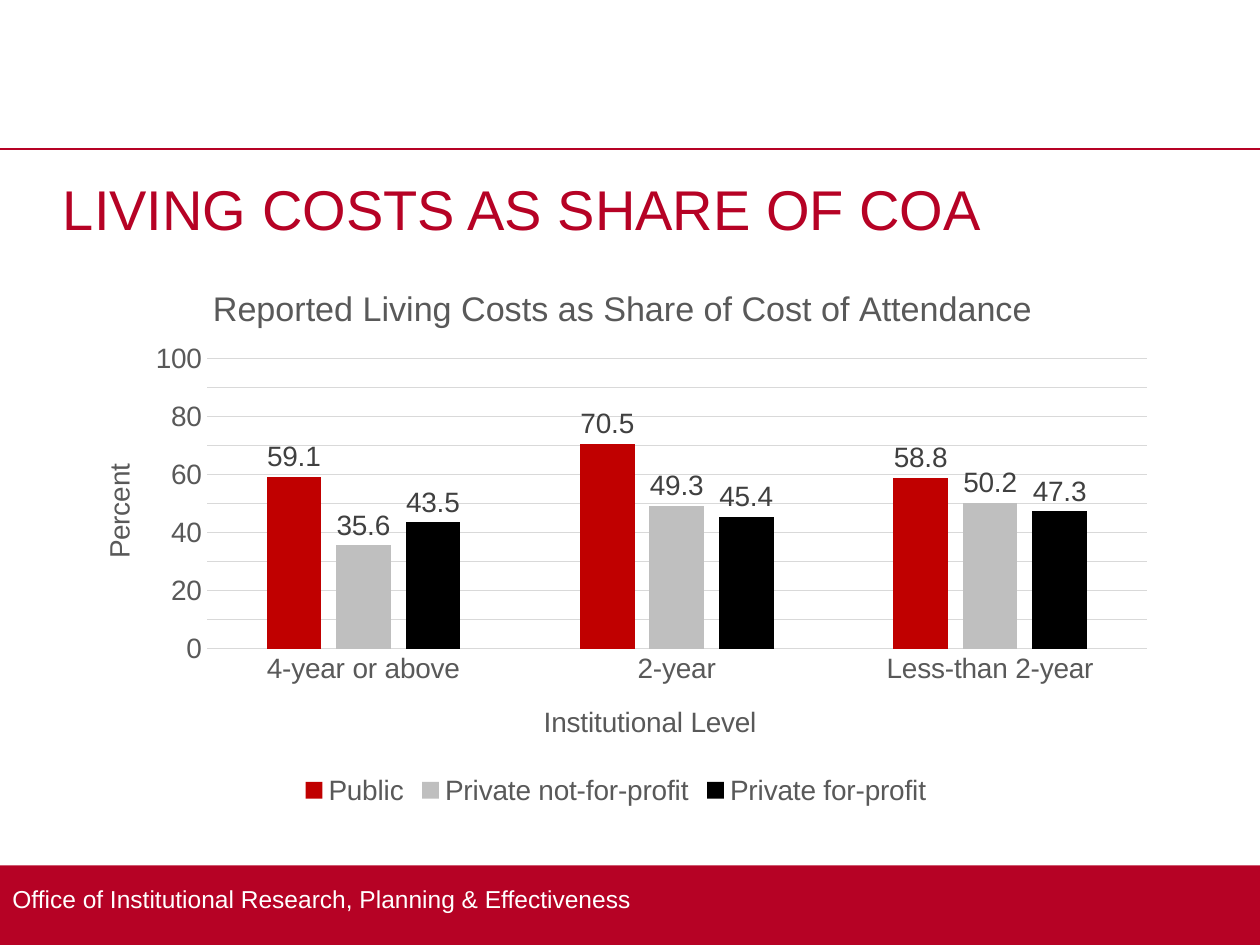
from dataclasses import dataclass

from lxml.etree import SubElement
from pptx import Presentation
from pptx.chart.data import CategoryChartData
from pptx.dml.color import RGBColor
from pptx.enum.chart import XL_CHART_TYPE, XL_LABEL_POSITION, XL_LEGEND_POSITION, XL_TICK_MARK
from pptx.enum.shapes import MSO_CONNECTOR, MSO_SHAPE
from pptx.enum.text import MSO_ANCHOR
from pptx.oxml import parse_xml
from pptx.oxml.ns import nsdecls, qn
from pptx.util import Pt


@dataclass(frozen=True)
class Theme:
    font: str = "Arial"
    brand: str = "B60225"
    white: str = "FFFFFF"
    muted: str = "595959"
    label: str = "404040"
    grid: str = "D9D9D9"
    bars: tuple = ("C00000", "BFBFBF", "000000")
    heading: float = 32
    chart_title: float = 19.5
    chart_text: float = 16
    footer: float = 14


THEME = Theme()
LEVELS = ("4-year or above", "2-year", "Less-than 2-year")
SHARES = {
    "Public": (59.1, 70.5, 58.8),
    "Private not-for-profit": (35.6, 49.3, 50.2),
    "Private for-profit": (43.5, 45.4, 47.3),
}


def apply_format(target, values):
    for name, value in values.items():
        setattr(target, name, value)


def style_font(font, size, color):
    apply_format(font, {"name": THEME.font, "size": Pt(size), "bold": False})
    font.color.rgb = RGBColor.from_string(color)


def style_line(line, color, width):
    line.color.rgb = RGBColor.from_string(color)
    line.width = Pt(width)


def add_text(page, box, text, size, color, frame_format):
    frame = page.shapes.add_textbox(*map(Pt, box)).text_frame
    apply_format(frame, {"word_wrap": True, **frame_format})
    span = frame.paragraphs[0].add_run()
    span.text = text
    style_font(span.font, size, color)


def add_header(page, box):
    left, top, width, height = box
    rule = page.shapes.add_connector(
        MSO_CONNECTOR.STRAIGHT, Pt(left), Pt(top), Pt(left + width), Pt(top))
    style_line(rule.line, THEME.brand, 1)
    SubElement(rule._element.spPr, qn("a:effectLst"))
    add_text(page, (left + 36, top + 8, width - 72, height - 8),
             "LIVING COSTS AS SHARE OF COA", THEME.heading, THEME.brand,
             {"margin_left": 0, "margin_right": 0, "margin_top": Pt(6.5)})


def add_footer(page, box):
    left, top, width, height = box
    band = page.shapes.add_shape(MSO_SHAPE.RECTANGLE, *map(Pt, box))
    band.shadow.inherit = False
    band.fill.solid()
    band.fill.fore_color.rgb = RGBColor.from_string(THEME.brand)
    band.line.fill.background()
    add_text(page, (left, top + 0.7, width, height - 8.7),
             "Office of Institutional Research, Planning & Effectiveness",
             THEME.footer, THEME.white, {"vertical_anchor": MSO_ANCHOR.MIDDLE})


def make_layout(inner=False, **edges):
    target = '<c:layoutTarget val="inner"/>' if inner else ""
    modes = '<c:xMode val="edge"/><c:yMode val="edge"/>'
    sizes = "".join(f'<c:{name} val="{value}"/>' for name, value in edges.items())
    return parse_xml(f'<c:layout {nsdecls("c")}><c:manualLayout>'
                     f'{target}{modes}{sizes}</c:manualLayout></c:layout>')


def set_title(title, text, size, x, y, turned=False):
    frame = title.text_frame
    frame.text = text
    style_font(frame.paragraphs[0].runs[0].font, size, THEME.muted)
    element = title._element
    for layout in element.findall(qn("c:layout")):
        element.remove(layout)
    element.find(qn("c:tx")).addnext(make_layout(x=x, y=y))
    if turned:
        body = next(element.iter(qn("a:bodyPr")))
        body.set("rot", "-5400000")
        body.set("vert", "horz")


def style_axes(chart):
    category, value = chart.category_axis, chart.value_axis
    for axis in (category, value):
        apply_format(axis, {"major_tick_mark": XL_TICK_MARK.NONE,
                            "minor_tick_mark": XL_TICK_MARK.NONE})
        style_font(axis.tick_labels.font, THEME.chart_text, THEME.muted)
    style_line(category.format.line, THEME.grid, 0.75)
    value.format.line.fill.background()
    apply_format(value, {"minimum_scale": 0, "maximum_scale": 100,
                         "major_unit": 10, "has_major_gridlines": True})
    style_line(value.major_gridlines.format.line, THEME.grid, 0.75)
    set_title(category.axis_title, "Institutional Level", THEME.chart_text, 0.43, 0.8)
    set_title(value.axis_title, "Percent", THEME.chart_text, 0.03, 0.37, turned=True)


def style_bars(plot):
    apply_format(plot, {"gap_width": 219, "overlap": -27, "vary_by_categories": False})
    for series, color in zip(plot.series, THEME.bars):
        series.format.fill.solid()
        series.format.fill.fore_color.rgb = RGBColor.from_string(color)
        labels = series.data_labels
        apply_format(labels, {"show_value": True, "position": XL_LABEL_POSITION.OUTSIDE_END,
                              "number_format": "0.0", "number_format_is_linked": False})
        style_font(labels.font, THEME.chart_text, THEME.label)


def add_cost_chart(page, box):
    data = CategoryChartData()
    data.categories = LEVELS
    for name, values in SHARES.items():
        data.add_series(name, values)
    chart = page.shapes.add_chart(
        XL_CHART_TYPE.COLUMN_CLUSTERED, *map(Pt, box), data).chart
    style_font(chart.font, THEME.chart_text, THEME.muted)
    apply_format(chart, {"has_title": True, "has_legend": True})
    set_title(chart.chart_title, "Reported Living Costs as Share of Cost of Attendance",
              THEME.chart_title, 0.13, 0.05)
    apply_format(chart.legend, {"position": XL_LEGEND_POSITION.BOTTOM,
                                "include_in_layout": False})
    style_font(chart.legend.font, THEME.chart_text, THEME.muted)
    style_axes(chart)
    style_bars(chart.plots[0])
    area = next(chart._chartSpace.iter(qn("c:plotArea")))
    for layout in area.findall(qn("c:layout")):
        area.remove(layout)
    area.insert(0, make_layout(inner=True, x=0.13, y=0.19, w=0.85, h=0.52))


def main():
    deck = Presentation()
    apply_format(deck, {"slide_width": Pt(720), "slide_height": Pt(540)})
    page = deck.slides.add_slide(deck.slide_layouts[6])
    add_footer(page, (0, 494.5, 720, 45.5))
    add_header(page, (0, 85, 720, 70.5))
    add_cost_chart(page, (36, 144, 632, 319.5))
    deck.save("out.pptx")


if __name__ == "__main__":
    main()
